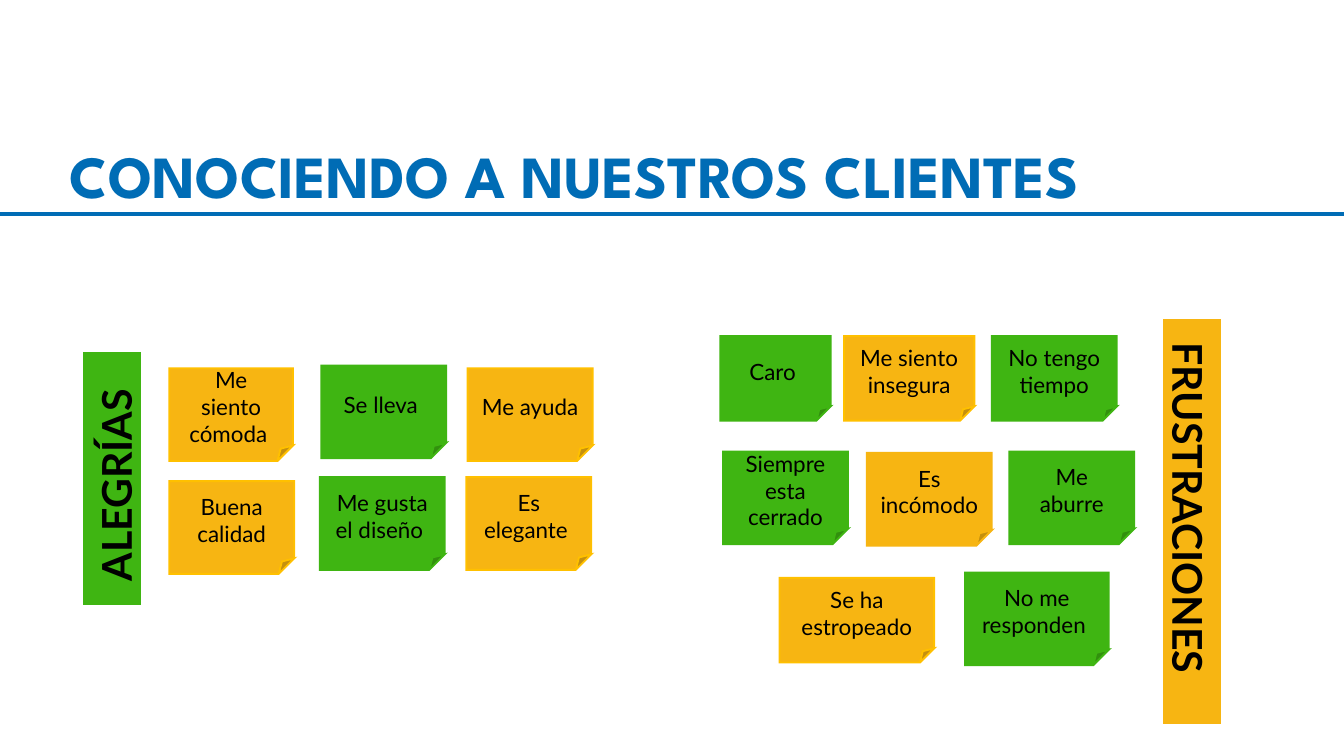
import pptx
import pptx.dml.color
import pptx.enum.shapes
import pptx.enum.text
import pptx.oxml
import pptx.util
from dataclasses import dataclass

Inches = pptx.util.Inches
Pt = pptx.util.Pt
MSO_SHAPE = pptx.enum.shapes.MSO_SHAPE
MSO_ANCHOR = pptx.enum.text.MSO_ANCHOR
PP_ALIGN = pptx.enum.text.PP_ALIGN
RGBColor = pptx.dml.color.RGBColor
NAMESPACE = 'xmlns:a="http://schemas.openxmlformats.org/drawingml/2006/main"'


@dataclass(frozen=True)
class Theme:
    green: RGBColor = RGBColor.from_string("3FB512")
    amber: RGBColor = RGBColor.from_string("F7B512")
    gold: RGBColor = RGBColor.from_string("FFC000")
    blue: RGBColor = RGBColor.from_string("006CB5")
    black: RGBColor = RGBColor.from_string("000000")
    title_font: str = "League Spartan"
    body_font: str = "Lato"
    title_size: int = 32
    banner_size: int = 22
    note_size: int = 12


theme = Theme()


def add_text(paragraph, text, font_name, size, color, bold=False):
    run = paragraph.add_run()
    run.text = text
    run.font.name = font_name
    run.font.size = Pt(size)
    run.font.bold = bold
    run.font.color.rgb = color


def add_box(slide, kind, left, top, width, height, fill, line, line_width):
    shape = slide.shapes.add_shape(
        kind, Inches(left), Inches(top), Inches(width), Inches(height))
    shape.shadow.inherit = False
    shape.fill.solid()
    shape.fill.fore_color.rgb = fill
    shape.line.color.rgb = line
    shape.line.width = Pt(line_width)
    # Sharp outline corners
    miter = pptx.oxml.parse_xml(f'<a:miter {NAMESPACE} lim="800000"/>')
    shape._element.spPr.get_or_add_ln().append(miter)
    shape.text_frame.word_wrap = True
    shape.text_frame.vertical_anchor = MSO_ANCHOR.MIDDLE
    return shape


# Widescreen 16:9 slide
presentation = pptx.Presentation()
presentation.slide_width = Inches(10)
presentation.slide_height = Inches(10) * 9 // 16
slide = presentation.slides.add_slide(presentation.slide_layouts[5])

# Title
title = slide.shapes.title
title.left, title.top = Inches(0.42), Inches(0.88)
title.width, title.height = Inches(8.86), Inches(0.91)
title.text_frame.word_wrap = True
title.text_frame.auto_size = pptx.enum.text.MSO_AUTO_SIZE.NONE
title.text_frame.vertical_anchor = MSO_ANCHOR.MIDDLE
paragraph = title.text_frame.paragraphs[0]
paragraph.alignment = PP_ALIGN.LEFT
paragraph.line_spacing = 0.9
add_text(paragraph, "CONOCIENDO A NUESTROS CLIENTES",
         theme.title_font, theme.title_size, theme.blue, bold=True)

# Rule under the title, across the full slide
rule = slide.shapes.add_connector(
    pptx.enum.shapes.MSO_CONNECTOR.STRAIGHT,
    Inches(0), Inches(1.59), Inches(10), Inches(1.59))
rule.line.color.rgb = theme.blue
rule.line.width = Pt(2)
rule._element.spPr.append(pptx.oxml.parse_xml(f"<a:effectLst {NAMESPACE}/>"))

# Sticky notes: fill and outline by style
note_styles = {
    "green": (theme.green, theme.green),
    "amber": (theme.amber, theme.gold),
    "plain amber": (theme.amber, theme.amber),
}
notes = [
    # Joys
    ("Me siento cómoda ", 1.26, 2.74, 0.92, 0.69, "amber"),
    ("Se lleva ", 2.39, 2.72, 0.93, 0.69, "green"),
    ("Me ayuda ", 3.48, 2.74, 0.93, 0.69, "amber"),
    ("Buena calidad", 1.26, 3.58, 0.93, 0.69, "amber"),
    ("Me gusta el diseño ", 2.38, 3.55, 0.93, 0.69, "green"),
    ("Es elegante ", 3.47, 3.55, 0.93, 0.69, "amber"),
    # Frustrations
    ("Caro ", 5.36, 2.5, 0.82, 0.63, "green"),
    ("Me siento insegura", 6.28, 2.5, 0.97, 0.63, "amber"),
    ("No tengo tiempo", 7.38, 2.5, 0.93, 0.63, "green"),
    ("Siempre esta cerrado", 5.38, 3.36, 0.93, 0.69, "green"),
    ("Es incómodo ", 6.45, 3.37, 0.93, 0.69, "plain amber"),
    ("Me aburre", 7.51, 3.36, 0.93, 0.69, "green"),
    ("Se ha estropeado", 5.8, 4.3, 1.15, 0.63, "amber"),
    ("No me responden ", 7.18, 4.26, 1.07, 0.69, "green"),
]
for text, left, top, width, height, style in notes:
    fill, line = note_styles[style]
    note = add_box(slide, MSO_SHAPE.FOLDED_CORNER,
                   left, top, width, height, fill, line, 1)
    paragraph = note.text_frame.paragraphs[0]
    paragraph.alignment = PP_ALIGN.CENTER
    add_text(paragraph, text, theme.body_font, theme.note_size, theme.black)

# Rotated banners naming each group
banners = [
    ("ALEGRÍAS", -0.1, 3.35, 1.87, 270, theme.green),
    ("FRUSTRACIONES", 7.37, 3.67, 3, 90, theme.amber),
]
for text, left, top, width, rotation, color in banners:
    banner = add_box(slide, MSO_SHAPE.RECTANGLE,
                     left, top, width, 0.42, color, color, 0.75)
    banner.rotation = rotation
    frame = banner.text_frame
    frame.margin_left = frame.margin_right = frame.margin_bottom = 0
    frame.margin_top = Inches(0.05)
    frame.auto_size = pptx.enum.text.MSO_AUTO_SIZE.SHAPE_TO_FIT_TEXT
    paragraph = frame.paragraphs[0]
    paragraph.alignment = PP_ALIGN.LEFT
    paragraph._p.get_or_add_pPr().set("marL", str(Inches(0.17)))
    add_text(paragraph, text, theme.body_font, theme.banner_size,
             theme.black, bold=True)

presentation.save("out.pptx")
